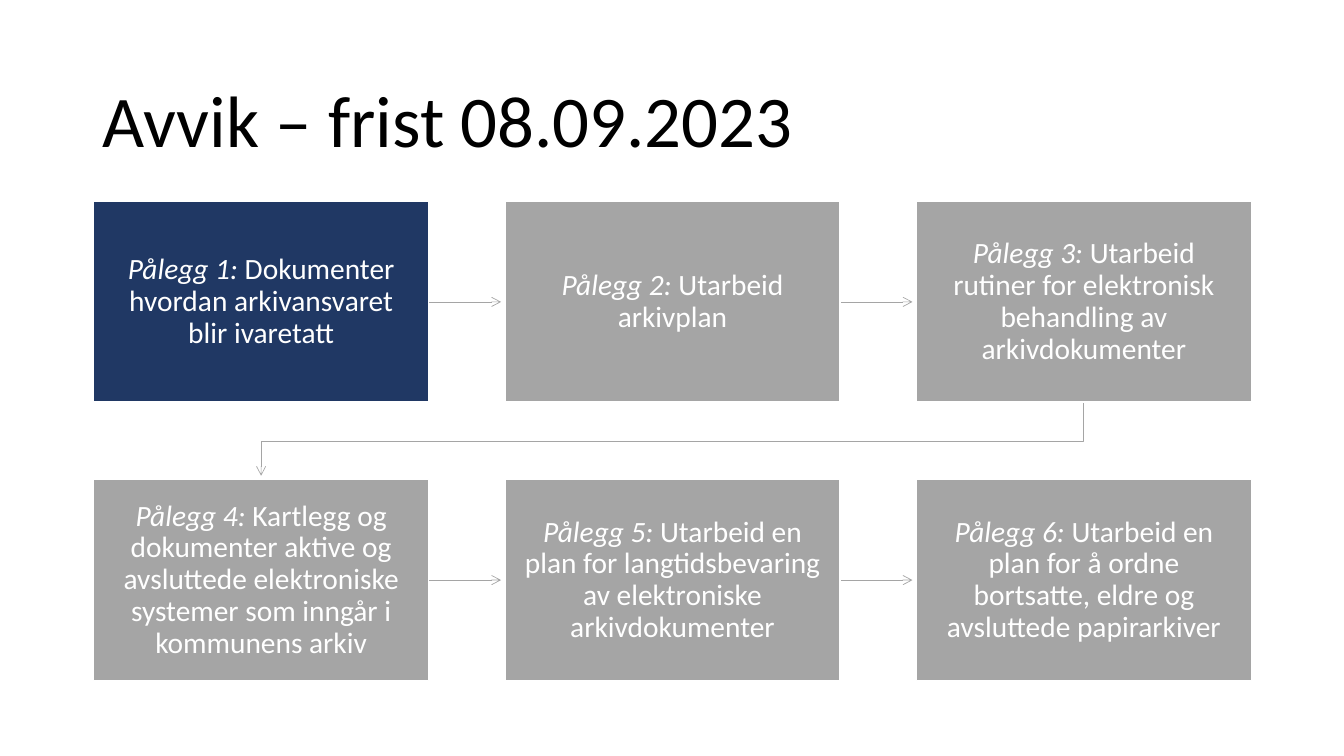
"""Build a slide that shows six orders as a two-row flow."""
from dataclasses import dataclass

from lxml import etree
from pptx import Presentation
from pptx.dml.color import RGBColor
from pptx.enum.shapes import MSO_CONNECTOR, MSO_SHAPE
from pptx.enum.text import MSO_ANCHOR, PP_ALIGN
from pptx.oxml.ns import qn
from pptx.shapes.base import BaseShape
from pptx.shapes.shapetree import SlideShapes
from pptx.text.text import TextFrame
from pptx.util import Inches, Pt

RECTANGLE = MSO_SHAPE.RECTANGLE
STRAIGHT = MSO_CONNECTOR.STRAIGHT
MIDDLE = MSO_ANCHOR.MIDDLE
LEFT, CENTER = PP_ALIGN.LEFT, PP_ALIGN.CENTER


@dataclass(frozen=True)
class Theme:
    """Colours, font and sizes of the slide."""

    font: str = "Calibri"
    title_size: float = 52
    order_size: float = 21
    line_spacing: float = 0.9
    border_width: float = 1
    arrow_width: float = 0.5
    ink: RGBColor = RGBColor(0x00, 0x00, 0x00)
    paper: RGBColor = RGBColor(0xFF, 0xFF, 0xFF)
    current: RGBColor = RGBColor(0x20, 0x38, 0x64)
    pending: RGBColor = RGBColor(0xA5, 0xA5, 0xA5)


@dataclass(frozen=True)
class Order:
    """One order, numbered from 1, and its place in the grid."""

    number: int
    task: str
    is_current: bool = False

    @property
    def left(self) -> float:
        """Return the left edge in inches."""
        return GRID_LEFT + (self.number - 1) % COLUMNS * COLUMN_STEP

    @property
    def top(self) -> float:
        """Return the top edge in inches."""
        return GRID_TOP + (self.number - 1) // COLUMNS * ROW_STEP


THEME = Theme()
COLUMNS = 3
GRID_LEFT, GRID_TOP = 0.93, 2.0
COLUMN_STEP, ROW_STEP = 4.08, 2.76
BOX_WIDTH, BOX_HEIGHT = 3.32, 1.99
ARROW_GAP = 0.04
ORDERS = (
    Order(1, "Dokumenter hvordan arkivansvaret blir ivaretatt", is_current=True),
    Order(2, "Utarbeid arkivplan"),
    Order(3, "Utarbeid rutiner for elektronisk behandling av arkivdokumenter"),
    Order(4, "Kartlegg og dokumenter aktive og avsluttede elektroniske "
             "systemer som inngår i kommunens arkiv"),
    Order(5, "Utarbeid en plan for langtidsbevaring av elektroniske arkivdokumenter"),
    Order(6, "Utarbeid en plan for å ordne bortsatte, eldre og "
             "avsluttede papirarkiver"),
)


def write_text(frame: TextFrame, text: str, *, size: float, color: RGBColor,
               align: PP_ALIGN = LEFT, italic_lead: str = "",
               margins: tuple[float, float] = (0.1, 0.05)) -> None:
    """Fill a frame with one paragraph that may open with an italic lead."""
    frame.word_wrap = True
    frame.vertical_anchor = MIDDLE
    frame.margin_left = frame.margin_right = Inches(margins[0])
    frame.margin_top = frame.margin_bottom = Inches(margins[1])
    paragraph = frame.paragraphs[0]
    paragraph.alignment = align
    paragraph.line_spacing = THEME.line_spacing
    for wording, italic in ((italic_lead, True), (text, False)):
        if wording:
            run = paragraph.add_run()
            run.text = wording
            run.font.name = THEME.font
            run.font.size = Pt(size)
            run.font.color.rgb = color
            run.font.italic = italic


def draw_title(shapes: SlideShapes, title: str) -> None:
    """Draw the slide title."""
    heading = shapes.add_textbox(Inches(0.92), Inches(0.61), Inches(11.5), Inches(1.24))
    write_text(heading.text_frame, title, size=THEME.title_size, color=THEME.ink)


def draw_order(shapes: SlideShapes, order: Order) -> None:
    """Draw the box of one order."""
    box = shapes.add_shape(RECTANGLE, Inches(order.left), Inches(order.top),
                           Inches(BOX_WIDTH), Inches(BOX_HEIGHT))
    box.shadow.inherit = False
    box.fill.solid()
    box.fill.fore_color.rgb = THEME.current if order.is_current else THEME.pending
    box.line.color.rgb = THEME.paper
    box.line.width = Pt(THEME.border_width)
    write_text(box.text_frame, order.task, size=THEME.order_size, color=THEME.paper,
               align=CENTER, italic_lead=f"Pålegg {order.number}: ", margins=(0.16, 0.17))


def style_arrow(arrow: BaseShape) -> None:
    """Give a line its colour, width and arrowhead, and no shadow."""
    arrow.line.color.rgb = THEME.pending
    arrow.line.width = Pt(THEME.arrow_width)
    properties = arrow.element.spPr
    etree.SubElement(properties.find(qn("a:ln")), qn("a:tailEnd"), type="arrow")
    etree.SubElement(properties, qn("a:effectLst"))


def draw_step(shapes: SlideShapes, source: Order, target: Order) -> None:
    """Draw the arrow from one order to the next, bent where the row changes."""
    if source.top == target.top:
        middle = Inches(source.top + BOX_HEIGHT / 2)
        arrow = shapes.add_connector(STRAIGHT, Inches(source.left + BOX_WIDTH), middle,
                                     Inches(target.left - ARROW_GAP), middle)
    else:
        start_x = Inches(source.left + BOX_WIDTH / 2)
        end_x = Inches(target.left + BOX_WIDTH / 2)
        bottom = source.top + BOX_HEIGHT
        turn_y = Inches((bottom + target.top) / 2)
        route = shapes.build_freeform(start_x, Inches(bottom))
        route.add_line_segments(((start_x, turn_y), (end_x, turn_y),
                                 (end_x, Inches(target.top - ARROW_GAP))), close=False)
        arrow = route.convert_to_shape()
        arrow.fill.background()
    style_arrow(arrow)


def main() -> None:
    """Build and save the presentation."""
    deck = Presentation()
    deck.slide_width, deck.slide_height = Inches(13.33), Inches(7.5)
    shapes = deck.slides.add_slide(deck.slide_layouts[6]).shapes
    draw_title(shapes, "Avvik – frist 08.09.2023")
    for source, target in zip(ORDERS, ORDERS[1:]):
        draw_step(shapes, source, target)
    for order in ORDERS:
        draw_order(shapes, order)
    deck.save("out.pptx")


if __name__ == "__main__":
    main()
